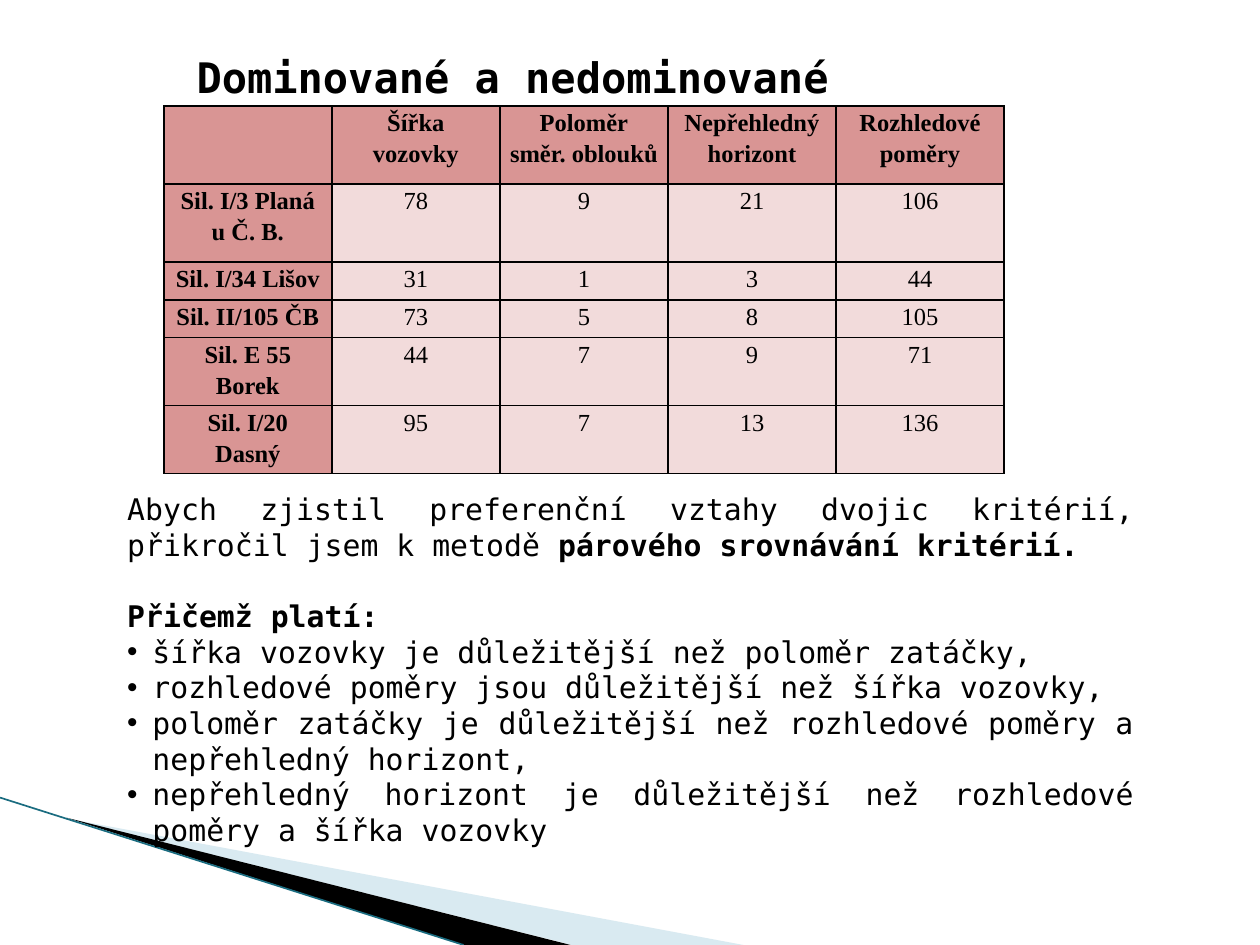
from dataclasses import dataclass

from lxml import etree
from pptx import Presentation
from pptx import util as u
from pptx.dml.color import RGBColor
from pptx.enum import shapes, text
from pptx.oxml import ns


@dataclass(frozen=True)
class Theme:
    ink: str = "000000"
    header_fill: str = "D99594"
    value_fill: str = "F2DBDB"
    pale_wedge: str = "A0CBDC"
    edge: str = "1A6C80"
    mono: str = "DejaVu Sans Mono"
    serif: str = "Times New Roman"
    title_size: float = 24
    table_size: float = 14
    body_size: float = 17
    body_line: float = 20.4


COLUMNS, ROWS = 100, 75

HEADERS = ["", "Šířka\nvozovky", "Poloměr\nsměr. oblouků",
           "Nepřehledný\nhorizont", "Rozhledové poměry"]
ROADS = [
    ("Sil. I/3 Planá u Č. B.", 78, 9, 21, 106),
    ("Sil. I/34 Lišov", 31, 1, 3, 44),
    ("Sil. II/105 ČB", 73, 5, 8, 105),
    ("Sil. E 55 Borek", 44, 7, 9, 71),
    ("Sil. I/20 Dasný", 95, 7, 13, 136),
]
INTRO = [("Abych zjistil preferenční vztahy dvojic kritérií, "
          "přikročil jsem k metodě ", False),
         ("párového srovnávání kritérií.", True)]
RULES = [
    "šířka vozovky je důležitější než poloměr zatáčky,",
    "rozhledové poměry jsou důležitější než šířka vozovky,",
    "poloměr zatáčky je důležitější než rozhledové poměry a nepřehledný horizont,",
    "nepřehledný horizont je důležitější než rozhledové poměry a šířka vozovky",
]


def child(parent, tag, **attributes):
    return etree.SubElement(parent, ns.qn(tag), attributes)


class SlideBuilder:
    """Draws on one slide, measured in columns and rows of a 100 by 75 grid."""

    def __init__(self, deck, theme):
        self.theme = theme
        self.column = deck.slide_width // COLUMNS
        self.row = deck.slide_height // ROWS
        self.slide = deck.slides.add_slide(deck.slide_layouts[1])
        self.backdrop_count = 0

    def point(self, column, row):
        return round(column * self.column), round(row * self.row)

    def send_to_back(self, shape):
        """Puts a shape behind the content, above earlier backdrop shapes."""
        self.slide.shapes._spTree.insert(2 + self.backdrop_count, shape._element)
        self.backdrop_count += 1

    def wedge(self, corners, color, opacity=100):
        points = [self.point(*corner) for corner in corners]
        builder = self.slide.shapes.build_freeform(*points[0])
        builder.add_line_segments(points[1:], close=True)
        shape = builder.convert_to_shape()
        shape.shadow.inherit = False
        shape.line.fill.background()
        shape.fill.solid()
        shape.fill.fore_color.rgb = RGBColor.from_string(color)
        if opacity < 100:
            tint = next(shape._element.spPr.iter(ns.qn("a:srgbClr")))
            child(tint, "a:alpha", val=str(opacity * 1000))
        self.send_to_back(shape)

    def edge_line(self, start, end):
        line = self.slide.shapes.add_connector(
            shapes.MSO_CONNECTOR.STRAIGHT, *self.point(*start), *self.point(*end))
        line.line.color.rgb = RGBColor.from_string(self.theme.edge)
        line.line.width = u.Pt(0.95)
        child(line._element.spPr, "a:effectLst")
        self.send_to_back(line)

    def span(self, para, words, font, size, bold=False):
        span = para.add_run()
        span.text = words
        span.font.name = font
        span.font.size = u.Pt(size)
        span.font.bold = bold
        span.font.color.rgb = RGBColor.from_string(self.theme.ink)

    def place(self, box, column, row, width, height, anchor):
        box.left, box.top = self.point(column, row)
        box.width, box.height = self.point(width, height)
        frame = box.text_frame
        frame.word_wrap = True
        frame.auto_size = text.MSO_AUTO_SIZE.NONE
        frame.vertical_anchor = anchor
        return frame

    def title(self, words, *area):
        frame = self.place(self.slide.shapes.title, *area, text.MSO_ANCHOR.TOP)
        para = frame.paragraphs[0]
        para.alignment = text.PP_ALIGN.LEFT
        self.span(para, words, self.theme.mono, self.theme.title_size, True)

    def body(self, items, *area):
        """Fills the body with (spans, bulleted, lines of space before) items."""
        theme = self.theme
        frame = self.place(self.slide.placeholders[1], *area, text.MSO_ANCHOR.MIDDLE)
        for index, (spans, bulleted, gap) in enumerate(items):
            para = frame.add_paragraph() if index else frame.paragraphs[0]
            para.alignment = text.PP_ALIGN.JUSTIFY
            para.line_spacing = u.Pt(theme.body_line)
            para.space_before = u.Pt(gap * theme.body_line)
            indent = 2 * self.column if bulleted else 0
            properties = para._p.get_or_add_pPr()
            properties.set("marL", str(indent))
            properties.set("indent", str(-indent))
            if bulleted:
                child(properties, "a:buFont", typeface="Arial")
                child(properties, "a:buChar", char="•")
            else:
                child(properties, "a:buNone")
            for words, bold in spans:
                self.span(para, words, theme.mono, theme.body_size, bold)

    def cell(self, cell, words, heading):
        theme = self.theme
        cell.margin_left = cell.margin_right = u.Pt(5.4)
        cell.margin_top = cell.margin_bottom = 0
        properties = cell._tc.get_or_add_tcPr()
        for side in ("a:lnL", "a:lnR", "a:lnT", "a:lnB"):
            border = child(properties, side, w=str(u.Pt(1)))
            child(child(border, "a:solidFill"), "a:srgbClr", val=theme.ink)
        cell.fill.solid()
        cell.fill.fore_color.rgb = RGBColor.from_string(
            theme.header_fill if heading else theme.value_fill)
        for index, line in enumerate(words.split("\n")):
            frame = cell.text_frame
            para = frame.add_paragraph() if index else frame.paragraphs[0]
            para.alignment = text.PP_ALIGN.CENTER
            para.line_spacing = 1.15
            if line:
                self.span(para, line, theme.serif, theme.table_size, heading)

    def table(self, records, column, row, width, heights):
        table = self.slide.shapes.add_table(
            len(records), len(records[0]), *self.point(column, row),
            *self.point(width, sum(heights))).table
        for line, height in zip(table.rows, heights):
            line.height = round(height * self.row)
        for r, record in enumerate(records):
            for c, value in enumerate(record):
                self.cell(table.cell(r, c), str(value), r == 0 or c == 0)


def main():
    deck = Presentation()
    deck.slide_width, deck.slide_height = u.Inches(10), u.Inches(7.5)
    theme = Theme()
    page = SlideBuilder(deck, theme)

    page.wedge([(5.5, 65), (59, 75), (45.4, 75)], theme.pale_wedge, opacity=40)
    page.wedge([(5.3, 64.9), (45.3, 75), (36.8, 75)], theme.ink)
    page.edge_line((0, 63.3), (36.8, 75))

    page.title("Dominované a nedominované", 14.6, 3.6, 64.4, 5)
    page.table([HEADERS, *ROADS], 13, 8.4, 66.7, [6.2, 6.2, 3, 3, 5.4, 5.4])
    page.body([(INTRO, False, 0), ([("Přičemž platí:", True)], False, 1)]
              + [([(rule, False)], True, 0) for rule in RULES],
              9.1, 38.3, 81.9, 29.6)

    deck.save("out.pptx")


if __name__ == "__main__":
    main()
